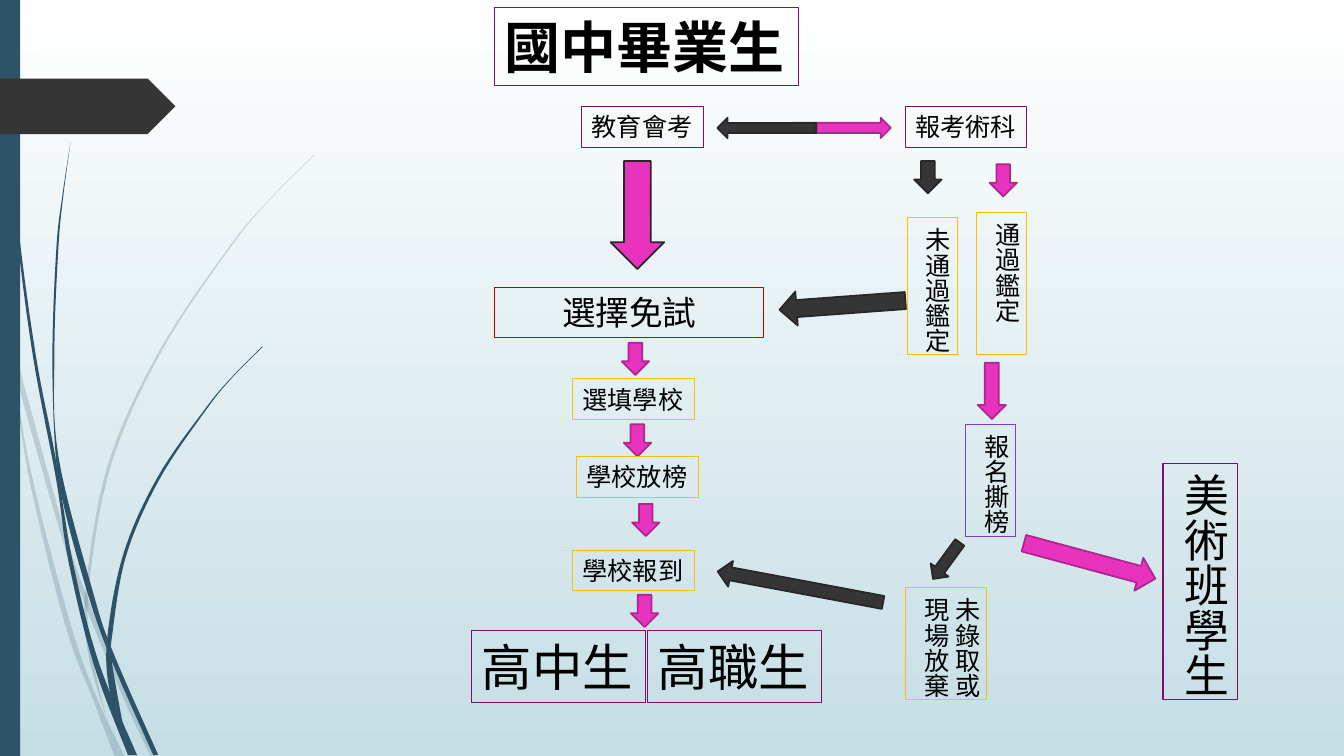
from lxml import etree
from pptx import Presentation
from pptx.dml.color import RGBColor
from pptx.enum.shapes import MSO_SHAPE as SHAPE
from pptx.enum.text import PP_ALIGN as ALIGN
from pptx.oxml.ns import qn
from pptx.util import Cm, Pt

NAVY, DARK, DARK_EDGE = "2E5369", "353535", "272727"
PINK, PINK_EDGE = "E833BF", "AC268D"
PURPLE, GOLD, RED, VIOLET = "7F0E66", "FFC000", "C00000", "7E40CC"
CJK = "Noto Sans CJK SC"


def rgb(color):
    return RGBColor.from_string(color)


def smooth(points, steps=8):
    """Return lengths along a soft curve through points in 0.01 inch."""
    ends = [points[0], *points, points[-1]]
    curve = []
    for a, b, c, d in zip(ends, ends[1:], ends[2:], ends[3:]):
        for i in range(steps):
            t = i / steps
            curve.append(tuple(
                Cm(0.0127 * (2 * q + (r - p) * t
                             + (2 * p - 5 * q + 4 * r - s) * t ** 2
                             + (3 * q - p - 3 * r + s) * t ** 3))
                for p, q, r, s in zip(a, b, c, d)))
    return curve + [tuple(Cm(0.0254 * v) for v in points[-1])]


prs = Presentation()
prs.slide_width, prs.slide_height = Cm(33.87), Cm(19.05)
slide = prs.slides.add_slide(prs.slide_layouts[6])
shapes = slide.shapes

# Background
bg = slide.background.fill
bg.gradient()
bg.gradient_angle = 270
for stop, position, color in zip(bg.gradient_stops, (0, 1), ("FFFFFF", "C5DEE5")):
    stop.position = position
    stop.color.rgb = rgb(color)

# Grass blades: opacity in percent, left edge, right edge
blades = [
    (20, [(0, 299), (10, 344), (28, 470), (65, 621), (92, 693), (114, 751)],
     [(0, 282), (11, 350), (31, 469), (70, 619), (96, 692), (124, 751)]),
    (20, [(14, 345), (17, 376), (58, 522), (84, 599), (123, 694), (150, 751)],
     [(14, 345), (62, 520), (88, 596), (127, 692), (155, 751)]),
    (20, [(312, 153), (268, 197), (228, 244), (158, 348), (107, 461),
          (85, 584), (87, 646), (105, 711)],
     [(312, 154), (268, 198), (229, 245), (160, 349), (110, 462),
      (88, 584), (91, 646), (105, 711)]),
    (100, [(3, 0), (7, 110), (17, 233), (33, 355), (56, 477), (68, 557),
           (93, 659), (127, 749)],
     [(4, 0), (8, 109), (19, 232), (36, 355), (55, 453), (72, 556),
      (98, 657), (136, 749)]),
    (100, [(70, 141), (62, 193), (56, 245), (52, 349), (55, 449), (64, 505),
           (88, 592), (111, 656), (152, 749)],
     [(70, 141), (63, 193), (58, 245), (54, 349), (58, 453), (93, 590),
      (113, 649), (157, 749)]),
    (100, [(260, 344), (231, 373), (204, 405), (156, 474), (122, 551),
           (106, 638), (110, 691), (122, 719)],
     [(261, 344), (231, 374), (205, 406), (158, 476), (125, 552),
      (111, 633), (111, 656), (122, 719)]),
]
for opacity, left, right in blades:
    outline = smooth(left) + smooth(right)[::-1]
    builder = shapes.build_freeform(*outline[0])
    builder.add_line_segments(outline[1:], close=True)
    s = builder.convert_to_shape()
    s.shadow.inherit = False
    s.fill.solid()
    s.fill.fore_color.rgb = rgb(NAVY)
    s.line.fill.background()
    if opacity < 100:
        color = s.element.spPr.find(".//" + qn("a:srgbClr"))
        etree.SubElement(color, qn("a:alpha")).set("val", str(opacity * 1000))

# Side bar, page tag and arrows: kind, x, y, width, height, rotation, fill, edge
DOWN, RIGHT = SHAPE.DOWN_ARROW, SHAPE.RIGHT_ARROW
blocks = [
    (SHAPE.RECTANGLE, 0, 0, 0.51, 19.05, 0, NAVY, None),
    (SHAPE.PENTAGON, 0, 1.98, 4.42, 1.4, 0, DARK, None),
    (DOWN, 15.39, 4.06, 1.35, 2.72, 0, PINK, DARK_EDGE),
    (DOWN, 24.94, 4.14, 0.69, 0.81, 0, PINK, PINK_EDGE),
    (DOWN, 24.64, 9.14, 0.71, 1.42, 0, PINK, PINK_EDGE),
    (RIGHT, 19.96, 2.97, 2.49, 0.51, 0, PINK, PINK_EDGE),
    (RIGHT, 18.08, 2.97, 2.49, 0.51, 180, DARK, DARK_EDGE),
    (DOWN, 23.04, 4.06, 0.69, 0.81, 0, DARK, DARK_EDGE),
    (DOWN, 20.8, 6.1, 0.86, 3.18, 85.8, DARK, DARK_EDGE),
    (DOWN, 27.03, 12.42, 0.86, 3.43, 285.1, PINK, PINK_EDGE),
    (DOWN, 23.57, 13.56, 0.56, 1.14, 36.2, DARK, DARK_EDGE),
    (DOWN, 19.84, 12.67, 0.66, 4.24, 100.6, DARK, DARK_EDGE),
]
for x, y in [(15.67, 8.64), (15.72, 10.69), (15.93, 12.7), (15.9, 14.99)]:
    blocks.append((DOWN, x, y, 0.69, 0.81, 0, PINK, PINK_EDGE))
for kind, x, y, w, h, rotation, fill, edge in blocks:
    s = shapes.add_shape(kind, Cm(x), Cm(y), Cm(w), Cm(h))
    s.shadow.inherit = False
    s.rotation = rotation
    s.fill.solid()
    s.fill.fore_color.rgb = rgb(fill)
    if edge:
        s.line.color.rgb = rgb(edge)
        s.line.width = Pt(1.25)
    else:
        s.line.fill.background()

# Steps: text, x, y, width, height, font size, edge
steps = [
    ("國中畢業生", 12.47, 0.2, 7.65, 1.96, 40, PURPLE),
    ("報考術科", 22.81, 2.69, 3.07, 1.02, 18, PURPLE),
    ("教育會考", 14.66, 2.69, 3.07, 1.02, 18, PURPLE),
    ("選擇免試", 12.47, 7.24, 6.78, 1.27, 24, RED),
    ("通過鑑定", 24.61, 5.36, 1.27, 3.58, 18, GOLD),
    ("報名撕榜", 24.33, 10.69, 1.27, 2.82, 18, VIOLET),
    ("未通過鑑定", 22.86, 5.49, 1.27, 3.45, 18, GOLD),
    ("美術班學生", 29.31, 11.68, 1.88, 5.94, 32, PURPLE),
    ("未錄取或\n現場放棄", 22.81, 14.81, 2.06, 2.82, 18, GOLD),
    ("選填學校", 14.43, 9.55, 3.07, 1.02, 18, GOLD),
    ("學校放榜", 14.53, 11.51, 3.07, 1.02, 18, GOLD),
    ("學校報到", 14.43, 13.87, 3.07, 1.02, 18, GOLD),
    ("高中生", 11.89, 15.9, 4.37, 1.8, 36, PURPLE),
    ("高職生", 16.33, 15.9, 4.37, 1.8, 36, PURPLE),
]
for text, x, y, w, h, size, edge in steps:
    s = shapes.add_textbox(Cm(x), Cm(y), Cm(w), Cm(h))
    s.line.color.rgb = rgb(edge)
    s.line.width = Pt(0.75)
    tf = s.text_frame
    tf.word_wrap = text in ("選擇免試", "通過鑑定")
    tf.text = text
    if h > w:
        s.element.txBody.bodyPr.set("vert", "eaVert")
    is_title = text == "國中畢業生"
    for p in tf.paragraphs:
        p.alignment = ALIGN.CENTER if text == "選擇免試" else ALIGN.LEFT
        p.font.size = Pt(size)
        p.font.bold = is_title
        p.font.color.rgb = rgb("000000")
        p.font.name = CJK if is_title else "Quicksand"
        latin = p.font._element.find(qn("a:latin")) if hasattr(p.font, "_element") else p._p.find(".//" + qn("a:latin"))
        latin.addnext(latin.makeelement(qn("a:ea"), {"typeface": CJK}))

prs.save("out.pptx")
